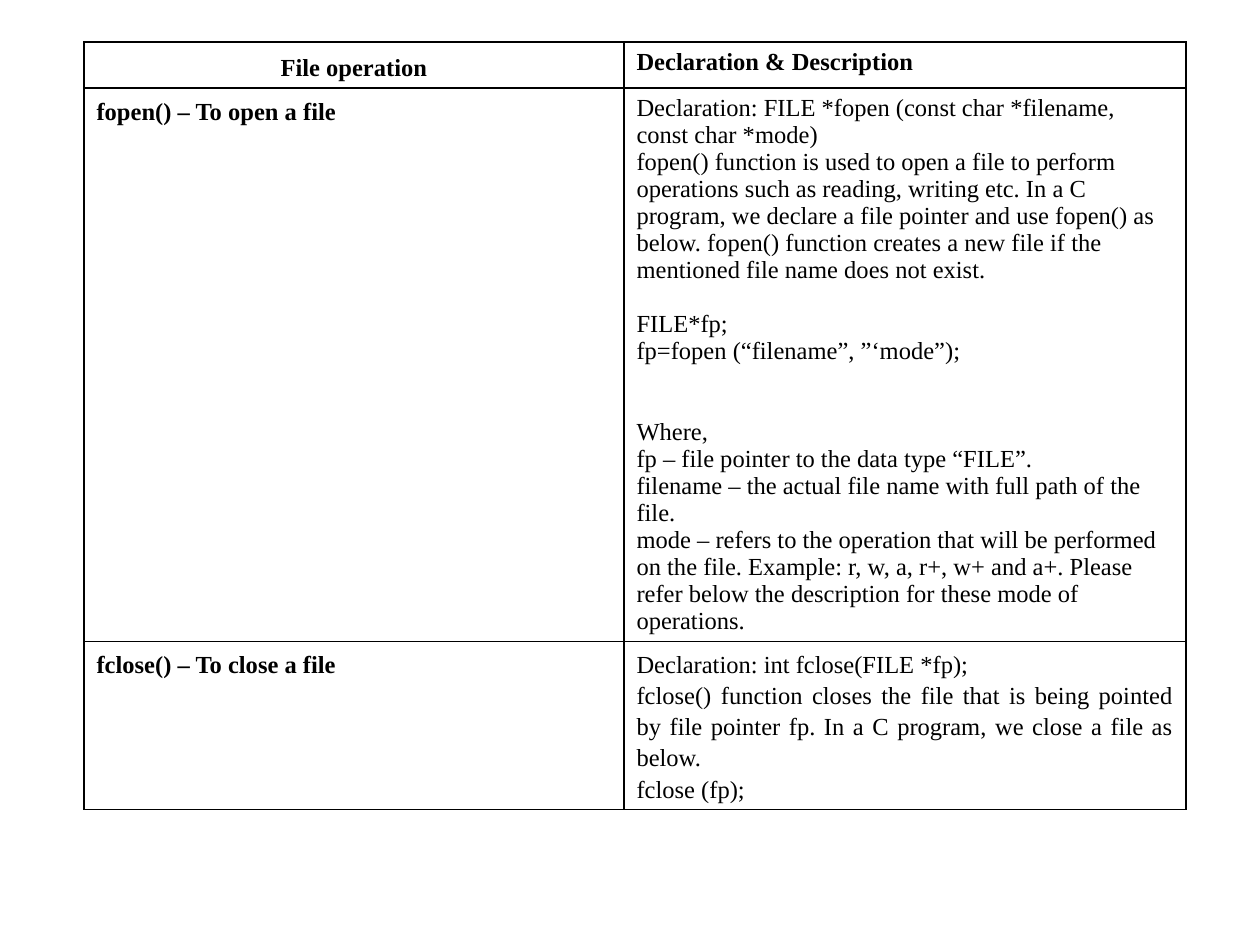
import copy
import pptx
import pptx.util
import pptx.dml.color
import pptx.enum.text
import pptx.oxml
import pptx.oxml.ns

SCALE = 914400 / 126
HUES = {"ink": "000000"}
FONT = "Times New Roman"
ALIGN = pptx.enum.text.PP_ALIGN
ANCHOR = pptx.enum.text.MSO_ANCHOR
COLS = [540, 562]
ROWS = [46, 416, 158]
GAP = 15.3


def px(num):
    return pptx.util.Emu(round(num * SCALE))


def write(para, text, bold=False, align=None, lead=None, after=None):
    para.text = text
    para.alignment = align
    para.line_spacing = lead
    if after:
        para.space_after = pptx.util.Pt(after)
    for run in para.runs:
        font = run.font
        font.name = FONT
        font.size = pptx.util.Pt(14)
        font.bold = bold
        font.color.rgb = pptx.dml.color.RGBColor.from_string(HUES["ink"])
    style = para.runs[0].font._element
    for brk in para._p.findall(pptx.oxml.ns.qn("a:br")):
        brk.append(copy.deepcopy(style))


def border(cell):
    props = cell._tc.get_or_add_tcPr()
    for pos, side in enumerate(["lnL", "lnR", "lnT", "lnB"]):
        line = pptx.oxml.parse_xml(
            f'<a:{side} {pptx.oxml.ns.nsdecls("a")} w="12700"><a:solidFill>'
            f'<a:srgbClr val="{HUES["ink"]}"/></a:solidFill></a:{side}>')
        props.insert(pos, line)


def fill(cell, paras, anchor=ANCHOR.TOP):
    cell.fill.background()
    cell.vertical_anchor = anchor
    border(cell)
    frame = cell.text_frame
    for num, (text, form) in enumerate(paras):
        para = frame.add_paragraph() if num else frame.paragraphs[0]
        write(para, text, **form)


def grid(slide):
    shape = slide.shapes.add_table(
        len(ROWS), len(COLS), px(84), px(42), px(sum(COLS)), px(sum(ROWS)))
    table = shape.table
    table.first_row = False
    table.horz_banding = False
    for col, wide in zip(table.columns, COLS):
        col.width = px(wide)
    for row, high in zip(table.rows, ROWS):
        row.height = px(high)
    return table


def main():
    deck = pptx.Presentation()
    deck.slide_width, deck.slide_height = px(1260), px(945)
    slide = deck.slides.add_slide(deck.slide_layouts[6])
    table = grid(slide)

    head = {"bold": True}
    label = {"bold": True, "lead": 1.15}
    block = {"after": GAP}
    just = {"align": ALIGN.JUSTIFY, "lead": 1.15}

    fill(table.cell(0, 0), [("File operation", {**label, "align": ALIGN.CENTER})],
         anchor=ANCHOR.BOTTOM)
    fill(table.cell(0, 1), [("Declaration & Description", head)])
    fill(table.cell(1, 0), [("fopen() – To open a file", label)])
    fill(table.cell(1, 1), [
        ("Declaration: FILE *fopen (const char *filename, const char *mode)", {}),
        ("fopen() function is used to open a file to perform operations such as "
         "reading, writing etc. In a C program, we declare a file pointer and use "
         "fopen() as below. fopen() function creates a new file if the mentioned "
         "file name does not exist.", block),
        ("FILE*fp;\nfp=fopen (“filename”, ”‘mode”);", {"after": 2 * GAP}),
        ("Where,\nfp – file pointer to the data type “FILE”.\n"
         "filename – the actual file name with full path of the file.\n"
         "mode – refers to the operation that will be performed on the file. "
         "Example: r, w, a, r+, w+ and a+. Please refer below the description "
         "for these mode of operations.", block),
    ])
    fill(table.cell(2, 0), [("fclose() – To close a file", label)])
    fill(table.cell(2, 1), [
        ("Declaration: int fclose(FILE *fp);", just),
        ("fclose() function closes the file that is being pointed by file pointer "
         "fp. In a C program, we close a file as below.\nfclose (fp);", just),
    ])
    deck.save("out.pptx")


if __name__ == "__main__":
    main()
